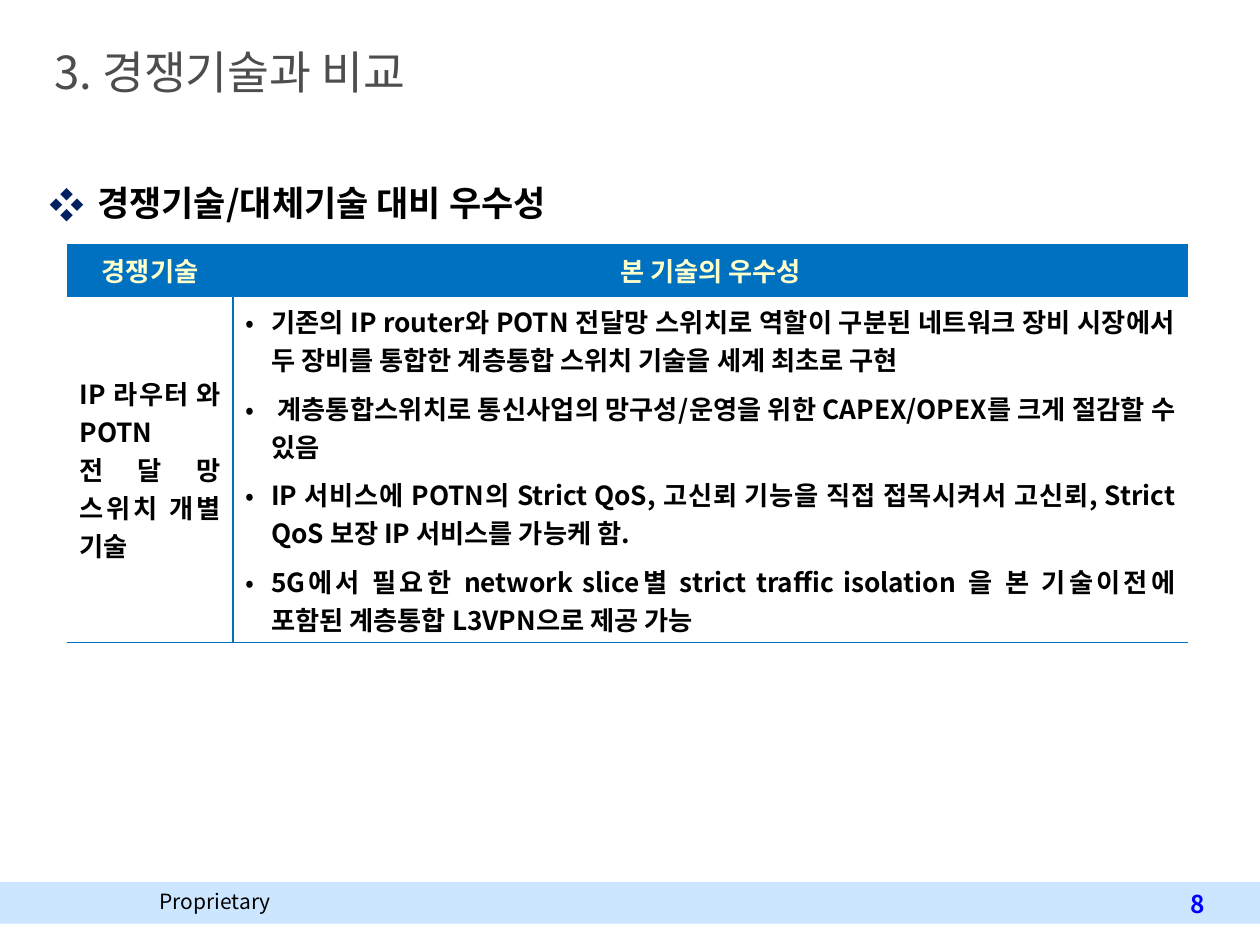
from dataclasses import dataclass

from lxml.etree import SubElement
from pptx import Presentation
from pptx.dml.color import RGBColor
from pptx.enum.shapes import MSO_SHAPE
from pptx.enum.text import MSO_ANCHOR, PP_ALIGN
from pptx.oxml.ns import qn
from pptx.util import Cm, Pt

FONT = "Noto Sans CJK KR"
HUES = {
    "bar": "CDE6FF", "blue": "0070C0", "navy": "002060", "cream": "FFFFCC",
    "grey": "4D4D4D", "black": "000000", "page": "0000FF",
}


@dataclass
class Label:
    text: str
    box: tuple[float, float, float, float]
    form: dict
    anchor: MSO_ANCHOR = MSO_ANCHOR.TOP


@dataclass
class Mark:
    char: str
    left: float
    hang: float
    hue: str = "black"


@dataclass
class Entry:
    lines: list[str]
    form: dict
    fill: str | None
    edges: tuple[str, ...]


def tint(hue: str) -> RGBColor:
    return RGBColor.from_string(HUES[hue])


def add_mark(para, mark: Mark) -> None:
    props = para._p.get_or_add_pPr()
    props.set("marL", str(Cm(mark.left)))
    props.set("indent", str(Cm(-mark.hang)))
    color = SubElement(props, qn("a:buClr"))
    SubElement(color, qn("a:srgbClr"), val=HUES[mark.hue])
    SubElement(props, qn("a:buFont"), typeface=FONT)
    SubElement(props, qn("a:buChar"), char=mark.char)


def write(para, text: str, *, size: float = 15, hue: str = "black",
          bold: bool = False, align: PP_ALIGN = PP_ALIGN.LEFT,
          before: float = 0, line: float = 1, mark: Mark | None = None) -> None:
    if mark:
        add_mark(para, mark)
    para.alignment = align
    para.space_before = Pt(before)
    para.line_spacing = line
    run = para.add_run()
    run.text = text
    run.font.size = Pt(size)
    run.font.bold = bold
    run.font.color.rgb = tint(hue)
    run.font.name = FONT
    SubElement(run.font._element, qn("a:ea"), typeface=FONT)


def add_label(slide, label: Label) -> None:
    frame = slide.shapes.add_textbox(*map(Cm, label.box)).text_frame
    frame.word_wrap = True
    frame.vertical_anchor = label.anchor
    write(frame.paragraphs[0], label.text, **label.form)


def set_edges(cell, edges: tuple[str, ...]) -> None:
    props = cell._tc.get_or_add_tcPr()
    for side in "LRTB":
        line = SubElement(props, qn(f"a:ln{side}"), w=str(Pt(1)))
        if side in edges:
            fill = SubElement(line, qn("a:solidFill"))
            SubElement(fill, qn("a:srgbClr"), val=HUES["blue"])
        else:
            SubElement(line, qn("a:noFill"))


def fill_cell(cell, entry: Entry) -> None:
    set_edges(cell, entry.edges)
    if entry.fill:
        cell.fill.solid()
        cell.fill.fore_color.rgb = tint(entry.fill)
    else:
        cell.fill.background()
    cell.vertical_anchor = MSO_ANCHOR.MIDDLE
    frame = cell.text_frame
    for i, text in enumerate(entry.lines):
        para = frame.add_paragraph() if i else frame.paragraphs[0]
        write(para, text, before=6 if i else 0, **entry.form)


def add_grid(slide, left: float, top: float, cols: list[float],
             rows: list[float], data: list[list[Entry]]) -> None:
    size = map(Cm, (left, top, sum(cols), sum(rows)))
    grid = slide.shapes.add_table(len(rows), len(cols), *size).table
    for col, width in zip(grid.columns, cols):
        col.width = Cm(width)
    for row, height, items in zip(grid.rows, rows, data):
        row.height = Cm(height)
        for cell, entry in zip(row.cells, items):
            fill_cell(cell, entry)


def add_bar(slide) -> None:
    bar = slide.shapes.add_shape(
        MSO_SHAPE.RECTANGLE, *map(Cm, (0, 17.78, 25.4, 0.84)))
    bar.shadow.inherit = False
    bar.fill.solid()
    bar.fill.fore_color.rgb = tint("bar")
    bar.line.fill.background()


HEAD = dict(hue="cream", bold=True, align=PP_ALIGN.CENTER)
BODY = dict(bold=True, align=PP_ALIGN.JUSTIFY)
LIST = dict(BODY, mark=Mark("•", 0.51, 0.51))

LABELS = [
    Label("Proprietary", (2.97, 17.78, 3.38, 0.76), dict(size=12)),
    Label("8", (23.47, 17.78, 1.07, 0.86),
          dict(size=14, hue="page", bold=True, align=PP_ALIGN.RIGHT),
          MSO_ANCHOR.MIDDLE),
    Label("3. 경쟁기술과 비교", (0.84, 0.76, 19.89, 1.37),
          dict(size=26, hue="grey"), MSO_ANCHOR.MIDDLE),
    Label("경쟁기술/대체기술 대비 우수성", (0.69, 3.12, 23.9, 2.01),
          dict(size=20, bold=True, line=1.5,
               mark=Mark("❖", 1.02, 0.97, "navy"))),
]

POINTS = [
    "기존의 IP router와 POTN 전달망 스위치로 역할이 구분된 네트워크 장비 "
    "시장에서 두 장비를 통합한 계층통합 스위치 기술을 세계 최초로 구현",
    " 계층통합스위치로 통신사업의 망구성/운영을 위한 CAPEX/OPEX를 크게 "
    "절감할 수 있음",
    "IP 서비스에 POTN의 Strict QoS, 고신뢰 기능을 직접 접목시켜서 고신뢰, "
    "Strict QoS 보장 IP 서비스를 가능케 함.",
    "5G에서 필요한 network slice별 strict traffic isolation 을 본 기술이전에 "
    "포함된 계층통합 L3VPN으로 제공 가능",
]

DATA = [
    [Entry(["경쟁기술"], HEAD, "blue", ("T", "R", "B")),
     Entry(["본 기술의 우수성"], HEAD, "blue", ("L", "T", "B"))],
    [Entry(["IP 라우터 와 POTN 전달망 스위치 개별 기술"], BODY, None,
           ("T", "R", "B")),
     Entry(POINTS, LIST, None, ("L", "T", "B"))],
]


def main() -> None:
    deck = Presentation()
    deck.slide_width, deck.slide_height = Cm(25.4), Cm(19.05)
    slide = deck.slides.add_slide(deck.slide_layouts[6])
    add_bar(slide)
    for label in LABELS:
        add_label(slide, label)
    add_grid(slide, 1.35, 4.93, [3.35, 19.25], [1.04, 6.98], DATA)
    deck.save("out.pptx")


if __name__ == "__main__":
    main()
